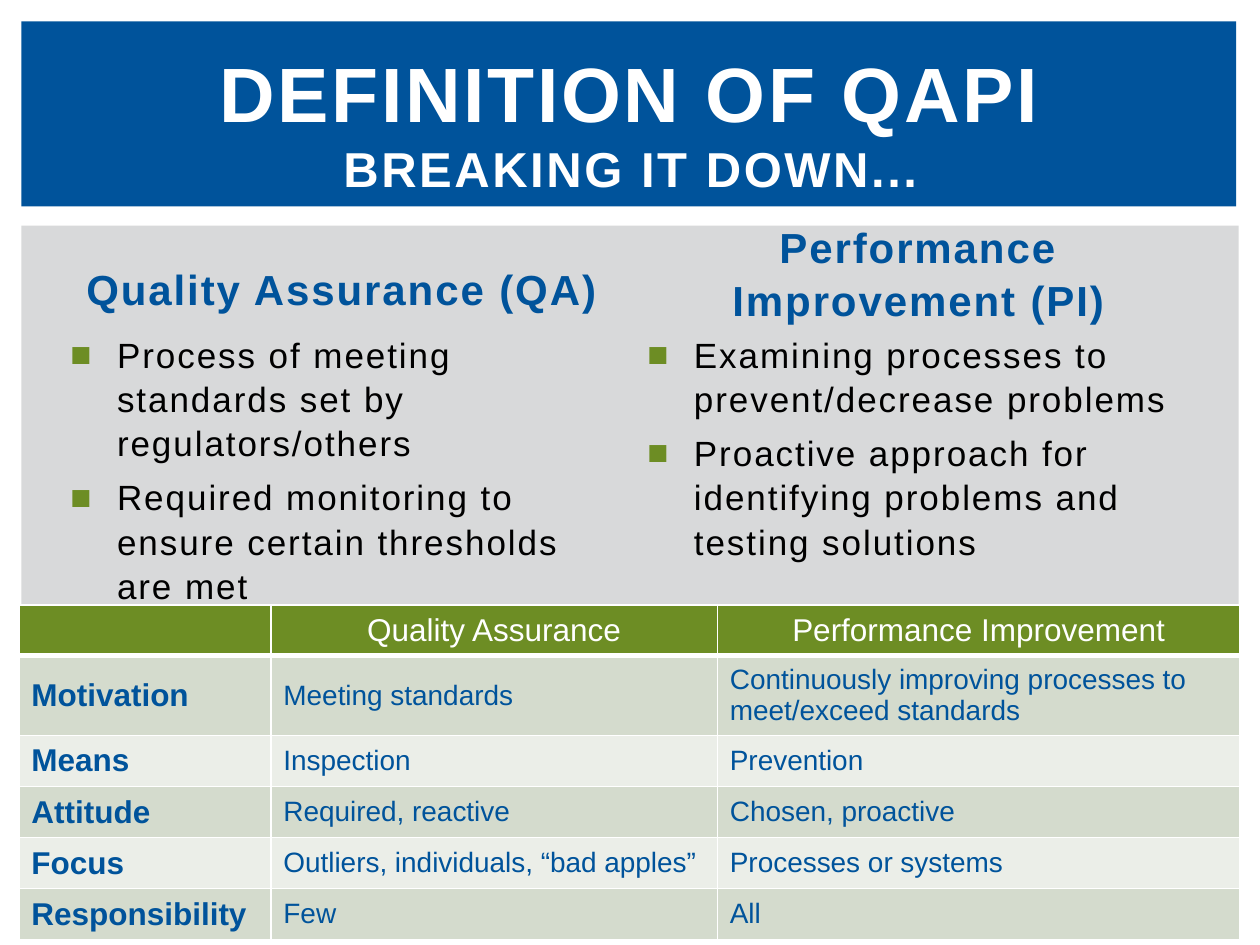
"""Build the QAPI definition slide with two bullet columns and a comparison table."""
from lxml.etree import SubElement
from pptx import Presentation
from pptx.dml.color import RGBColor
from pptx.enum.shapes import MSO_SHAPE as Shape
from pptx.enum.text import MSO_ANCHOR as Anchor, PP_ALIGN as Align
from pptx.oxml.ns import qn
from pptx.util import Cm, Pt

BLUE = RGBColor(0x00, 0x53, 0x9B)
GREEN = RGBColor(0x6D, 0x8D, 0x24)
GRAY = RGBColor(0xD8, 0xD9, 0xDA)
DARK_BAND = RGBColor(0xD4, 0xDB, 0xCD)
LIGHT_BAND = RGBColor(0xEB, 0xEE, 0xE8)
WHITE = RGBColor(0xFF, 0xFF, 0xFF)
BLACK = RGBColor(0x00, 0x00, 0x00)


def style_run(run, size, color, bold=False, spacing=0):
    run.font.name = "Arial"
    run.font.size = Pt(size)
    run.font.bold = bold
    run.font.color.rgb = color
    if spacing:
        run.font._element.set("spc", str(spacing))


def add_text_frame(slide, left, top, width, height, anchor):
    box = slide.shapes.add_textbox(Cm(left), Cm(top), Cm(width), Cm(height))
    box.text_frame.word_wrap = True
    box.text_frame.vertical_anchor = anchor
    return box.text_frame


presentation = Presentation()
presentation.slide_width = Cm(25.4)
presentation.slide_height = Cm(19.05)
slide = presentation.slides.add_slide(presentation.slide_layouts[6])

panels = [(4.55, 24.54, 14.02, GRAY), (0.43, 24.49, 3.73, BLUE)]
for top, width, height, color in panels:
    panel = slide.shapes.add_shape(Shape.RECTANGLE, Cm(0.43), Cm(top), Cm(width), Cm(height))
    panel.shadow.inherit = False
    panel.fill.solid()
    panel.fill.fore_color.rgb = color
    panel.line.fill.background()

title = add_text_frame(slide, 1.07, 0.99, 23.29, 2.92, Anchor.MIDDLE)
paragraph = title.paragraphs[0]
paragraph.text = "DEFINITION OF QAPI\vBREAKING IT DOWN..."
paragraph.alignment = Align.CENTER
for run, size in zip(paragraph.runs, (44, 28)):
    style_run(run, size, WHITE, True, 150)

columns = [
    (1.17, "Quality Assurance (QA)", Anchor.MIDDLE, [
        "Process of meeting standards set by regulators/others",
        "Required monitoring to ensure certain thresholds are met",
    ]),
    (12.8, "Performance Improvement (PI)", Anchor.BOTTOM, [
        "Examining processes to prevent/decrease problems",
        "Proactive approach for identifying problems and testing solutions",
    ]),
]
for left, heading, anchor, bullets in columns:
    heading_frame = add_text_frame(slide, left, 4.9, 11.43, 1.78, anchor)
    paragraph = heading_frame.paragraphs[0]
    paragraph.text = heading
    paragraph.alignment = Align.CENTER
    paragraph.line_spacing = 1.05
    style_run(paragraph.runs[0], 24, BLUE, True, 110)

    bullet_frame = add_text_frame(slide, left, 6.55, 11.43, 10.24, Anchor.TOP)
    bullet_frame.text = "\n".join(bullets)
    for paragraph in bullet_frame.paragraphs:
        paragraph.line_spacing = 1.05
        paragraph.space_after = Pt(6)
        properties = paragraph._p.get_or_add_pPr()
        properties.set("marL", str(Cm(0.94)))
        properties.set("indent", str(-Cm(0.94)))
        bullet_color = SubElement(properties, qn("a:buClr"))
        SubElement(bullet_color, qn("a:srgbClr"), val=str(GREEN))
        SubElement(properties, qn("a:buFont"), typeface="Arial")
        SubElement(properties, qn("a:buChar"), char="■")
        style_run(paragraph.runs[0], 20, BLACK, spacing=110)

rows = [
    ("", "Quality Assurance", "Performance Improvement"),
    ("Motivation", "Meeting standards", "Continuously improving processes to meet/exceed standards"),
    ("Means", "Inspection", "Prevention"),
    ("Attitude", "Required, reactive", "Chosen, proactive"),
    ("Focus", "Outliers, individuals, “bad apples”", "Processes or systems"),
    ("Responsibility", "Few", "All"),
]
row_heights = [0.97, 1.5] + [1.03] * 4
column_widths = [5.08, 9.0, 10.54]
table = slide.shapes.add_table(
    len(rows), len(column_widths), Cm(0.38), Cm(12.2), Cm(sum(column_widths)), Cm(sum(row_heights))
).table
for column, width in zip(table.columns, column_widths):
    column.width = Cm(width)
for row, height in zip(table.rows, row_heights):
    row.height = Cm(height)

for row_index, texts in enumerate(rows):
    is_header = row_index == 0
    band = GREEN if is_header else DARK_BAND if row_index % 2 else LIGHT_BAND
    for column_index, text in enumerate(texts):
        cell = table.cell(row_index, column_index)
        cell.vertical_anchor = Anchor.MIDDLE
        for side in ("lnL", "lnR", "lnT", "lnB"):
            points = 3 if is_header and side == "lnB" else 1
            border = SubElement(cell._tc.get_or_add_tcPr(), qn(f"a:{side}"), w=str(Pt(points)))
            SubElement(SubElement(border, qn("a:solidFill")), qn("a:srgbClr"), val=str(WHITE))
        cell.fill.solid()
        cell.fill.fore_color.rgb = band
        cell.text_frame.text = text
        paragraph = cell.text_frame.paragraphs[0]
        if is_header:
            paragraph.alignment = Align.CENTER
        is_label = column_index == 0
        for run in paragraph.runs:
            style_run(run, 18 if is_header or is_label else 16, WHITE if is_header else BLUE, is_label)

presentation.save("out.pptx")
